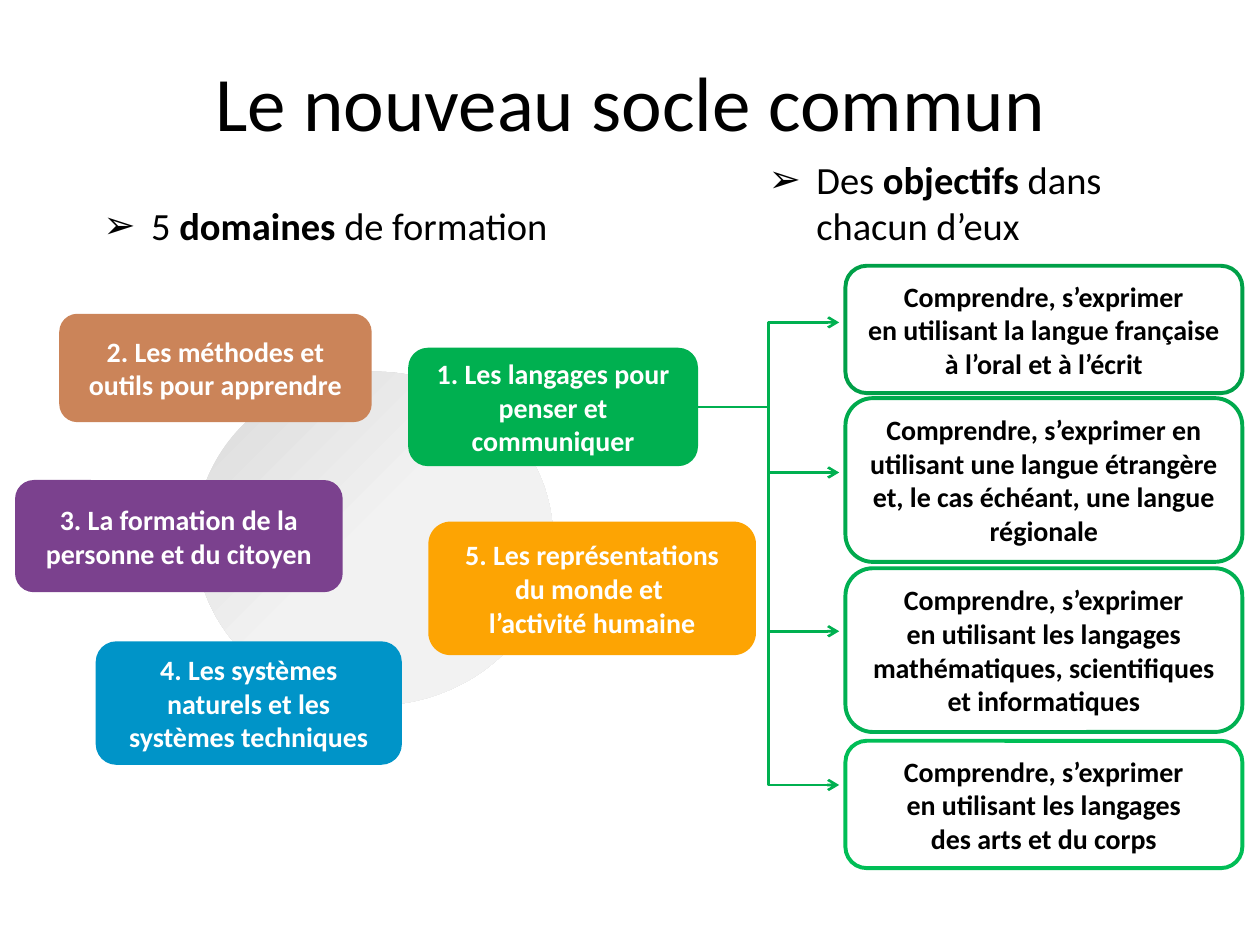
from pptx import Presentation
from pptx.dml.color import RGBColor
from pptx.enum.shapes import MSO_CONNECTOR, MSO_SHAPE
from pptx.enum.text import MSO_ANCHOR, MSO_AUTO_SIZE, PP_ALIGN
from pptx.oxml import parse_xml
from pptx.oxml.ns import nsdecls
from pptx.util import Inches, Pt

BLACK, WHITE = RGBColor(0, 0, 0), RGBColor(255, 255, 255)
GREEN = RGBColor(0x00, 0xB0, 0x50)
BLUE = RGBColor(0x00, 0x94, 0xC8)
PURPLE = RGBColor(0x7B, 0x41, 0x8E)
BROWN = RGBColor(0xCB, 0x84, 0x59)
ORANGE = RGBColor(0xFD, 0xA4, 0x03)

# Content; frames are left, top, width, height in percent of the slide
TITLE = "Le nouveau socle commun"
TITLE_FRAME = (5.1, 1.73, 89.9, 17.87)
DISC_FRAME = (15.5, 39.33, 28.4, 35.33)
LISTS = [
    ((7.2, 20.67, 43.2, 6.27), ("5 ", "domaines", " de formation")),
    ((60, 15.87, 34.9, 11.2), ("Des ", "objectifs", " dans chacun d’eux")),
]
DOMAINS = [
    ("4. Les systèmes naturels et les systèmes techniques", BLUE, (7.6, 67.87, 24.3, 13.07)),
    ("3. La formation de la personne et du citoyen", PURPLE, (1.2, 50.8, 26, 11.87)),
    ("2. Les méthodes et outils pour apprendre", BROWN, (4.7, 33.2, 24.8, 11.47)),
    ("5. Les représentations du monde et \nl’activité humaine", ORANGE, (34, 55.2, 26, 14.13)),
    ("1. Les langages pour penser et communiquer", GREEN, (32.4, 36.8, 23, 12.53)),
]
# Text, outline, top, height, arrow level
OBJECTIVES = [
    ("Comprendre, s’exprimer\nen utilisant la langue française à l’oral et à l’écrit",
     RGBColor(0x00, 0xA0, 0x48), 28.13, 13.47, 34.13),
    ("Comprendre, s’exprimer en utilisant une langue étrangère et, "
     "le cas échéant, une langue régionale",
     RGBColor(0x00, 0xAA, 0x4D), 42.13, 17.33, 50),
    ("Comprendre, s’exprimer\nen utilisant les langages mathématiques, "
     "scientifiques et informatiques",
     RGBColor(0x00, 0xB0, 0x52), 60.13, 17.33, 66.8),
    ("Comprendre, s’exprimer\nen utilisant les langages\ndes arts et du corps",
     RGBColor(0x00, 0xBE, 0x56), 78.4, 13.47, 83.07),
]
OBJ_LEFT, OBJ_WIDTH, ARROW_END = 67.1, 31.5, 66.6

prs = Presentation()
prs.slide_width, prs.slide_height = Inches(10), Inches(7.5)
s = prs.slides.add_slide(prs.slide_layouts[3])


def px(share):
    return round(prs.slide_width * share / 100)


def py(share):
    return round(prs.slide_height * share / 100)


def place(sp, frame):
    x, y, w, h = frame
    sp.left, sp.top, sp.width, sp.height = px(x), py(y), px(w), py(h)


def style(r, size, color, bold=False):
    for name, value in {"name": "Calibri", "size": Pt(size), "bold": bold}.items():
        setattr(r.font, name, value)
    r.font.color.rgb = color


def add_plain(kind, frame):
    x, y, w, h = frame
    sp = s.shapes.add_shape(kind, px(x), py(y), px(w), py(h))
    sp.shadow.inherit = False
    sp.line.fill.background()
    return sp


def add_box(text, frame, color):
    sp = add_plain(MSO_SHAPE.ROUNDED_RECTANGLE, frame)
    tf = sp.text_frame
    tf.word_wrap, tf.vertical_anchor = True, MSO_ANCHOR.MIDDLE
    p = tf.paragraphs[0]
    p.text, p.alignment = text, PP_ALIGN.CENTER
    for r in p.runs:
        style(r, 16, color, True)
    return sp


# Grey disc behind the domains
disc = add_plain(MSO_SHAPE.OVAL, DISC_FRAME)
disc.fill.solid()
solid = disc.fill._xPr.solidFill
stops = "".join(f'<a:gs pos="{pos}"><a:srgbClr val="{val}"/></a:gs>'
                for pos, val in [(0, "F2F2F2"), (50000, "F2F2F2"), (100000, "D9D9D9")])
solid.getparent().replace(solid, parse_xml(
    f'<a:gradFill {nsdecls("a")} rotWithShape="1"><a:gsLst>{stops}</a:gsLst>'
    '<a:path path="circle"><a:fillToRect l="100000" t="100000"/></a:path></a:gradFill>'))

# Title
title = s.shapes.title
place(title, TITLE_FRAME)
title.text_frame.vertical_anchor = MSO_ANCHOR.MIDDLE
p = title.text_frame.paragraphs[0]
p.text, p.alignment = TITLE, PP_ALIGN.CENTER
style(p.runs[0], 44, BLACK)

# Five domains; the last one is the source of the arrows
for text, fill, frame in DOMAINS:
    domain = add_box(text, frame, WHITE)
    domain.fill.solid()
    domain.fill.fore_color.rgb = fill
languages = domain

# Bulleted headings
for ph, (frame, parts) in zip(list(s.placeholders)[1:], LISTS):
    place(ph, frame)
    tf = ph.text_frame
    tf.word_wrap, tf.auto_size = True, MSO_AUTO_SIZE.SHAPE_TO_FIT_TEXT
    p = tf.paragraphs[0]
    p.space_before = Pt(0)
    for i, part in enumerate(parts):
        r = p.add_run()
        r.text = part
        style(r, 22, BLACK, i == 1)
    pPr = p._p.get_or_add_pPr()
    pPr.set("marL", str(Inches(0.38)))
    pPr.set("indent", str(-Inches(0.38)))
    pPr.append(parse_xml(f'<a:buChar {nsdecls("a")} char="➢"/>'))

# Objectives and the arrows that lead to them
for text, color, top, height, level in OBJECTIVES:
    box = add_box(text, (OBJ_LEFT, top, OBJ_WIDTH, height), BLACK)
    box.fill.background()
    box.line.color.rgb, box.line.width = color, Pt(2.25)

    arrow = s.shapes.add_connector(
        MSO_CONNECTOR.ELBOW, languages.left + languages.width,
        languages.top + languages.height // 2, px(ARROW_END), py(level))
    arrow.begin_connect(languages, 3)
    arrow.line.color.rgb, arrow.line.width = GREEN, Pt(1.5)
    arrow.line._get_or_add_ln().append(
        parse_xml(f'<a:tailEnd {nsdecls("a")} type="arrow"/>'))
    arrow._element.spPr.append(parse_xml(f'<a:effectLst {nsdecls("a")}/>'))

prs.save("out.pptx")
